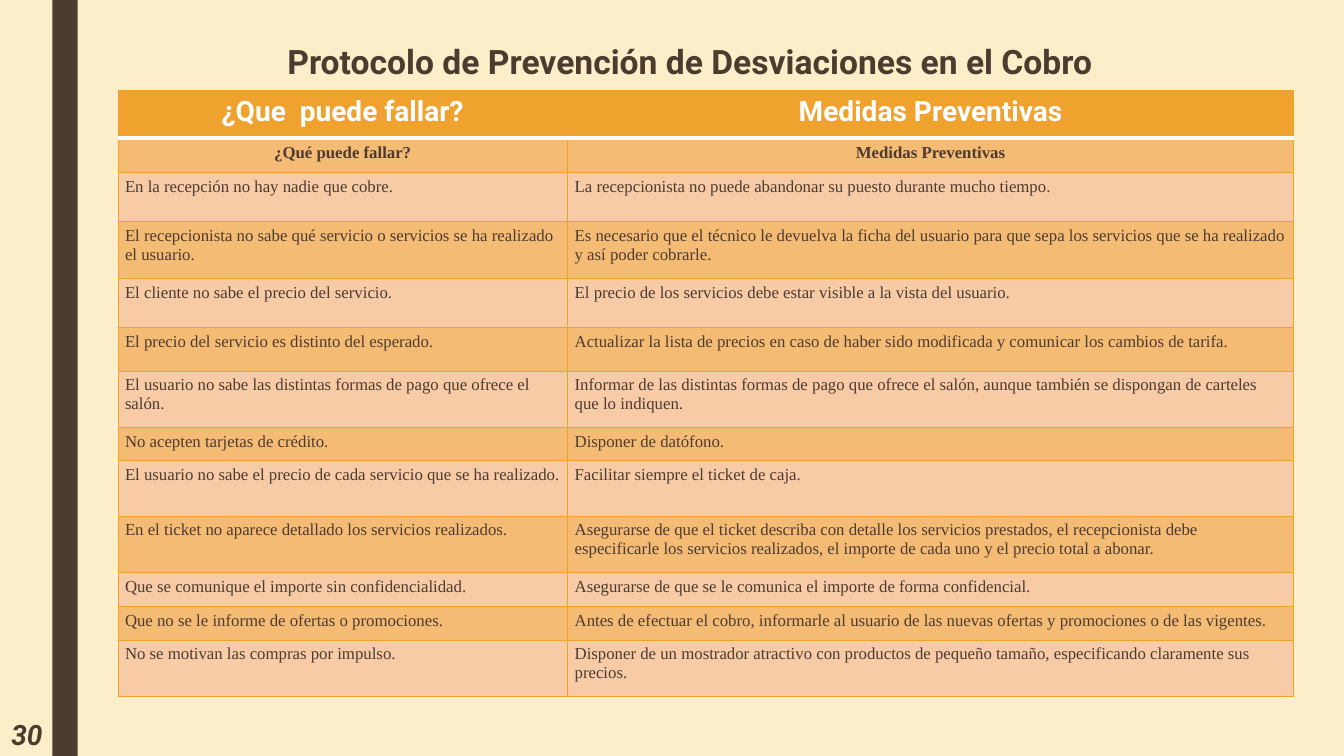
from lxml.etree import SubElement
from pptx import Presentation
from pptx.dml.color import RGBColor
from pptx.enum.shapes import MSO_SHAPE
from pptx.enum.text import MSO_ANCHOR, PP_ALIGN
from pptx.oxml.ns import qn
from pptx.util import Inches, Pt

BROWN, ORANGE, WHITE, CREAM = "4E3B30", "F0A22E", "FFFFFF", "FBEEC9"
BANDS = ("F7CBA5", "F4BB75")
COLUMN_WIDTHS = (4.46, 7.2)
ROW_HEIGHTS = (0.47, 0.34, 0.49, 0.56, 0.49, 0.43, 0.56, 0.33, 0.55, 0.56, 0.34, 0.33, 0.56)
ROWS = (
    ("¿Que  puede fallar?", "Medidas Preventivas"),
    ("¿Qué puede fallar?", "Medidas Preventivas"),
    ("En la recepción no hay nadie que cobre.",
     "La recepcionista no puede abandonar su puesto durante mucho tiempo."),
    ("El recepcionista no sabe qué servicio o servicios se ha realizado el usuario.",
     "Es necesario que el técnico le devuelva la ficha del usuario para que sepa los servicios "
     "que se ha realizado y así poder cobrarle."),
    ("El cliente no sabe el precio del servicio.",
     "El precio de los servicios debe estar visible a la vista del usuario."),
    ("El precio del servicio es distinto del esperado.",
     "Actualizar la lista de precios en caso de haber sido modificada y comunicar los cambios "
     "de tarifa."),
    ("El usuario no sabe las distintas formas de pago que ofrece el salón.",
     "Informar de las distintas formas de pago que ofrece el salón, aunque también se dispongan "
     "de carteles que lo indiquen."),
    ("No acepten tarjetas de crédito.", "Disponer de datófono."),
    ("El usuario no sabe el precio de cada servicio que se ha realizado.",
     "Facilitar siempre el ticket de caja."),
    ("En el ticket no aparece detallado los servicios realizados.",
     "Asegurarse de que el ticket describa con detalle los servicios prestados, el recepcionista "
     "debe especificarle los servicios realizados, el importe de cada uno y el precio total a "
     "abonar."),
    ("Que se comunique el importe sin confidencialidad.",
     "Asegurarse de que se le comunica el importe de forma confidencial."),
    ("Que no se le informe de ofertas o promociones.",
     "Antes de efectuar el cobro, informarle al usuario de las nuevas ofertas y promociones o "
     "de las vigentes."),
    ("No se motivan las compras por impulso.",
     "Disponer de un mostrador atractivo con productos de pequeño tamaño, especificando "
     "claramente sus precios."),
)


def paint(fill, color):
    fill.solid()
    fill.fore_color.rgb = RGBColor.from_string(color)


def write(frame, text, size, align, font="Roboto", color=BROWN, bold=True, italic=False):
    para = frame.paragraphs[0]
    para.text = text
    para.alignment = align
    para.font.name = font
    para.font.size = Pt(size)
    para.font.bold = bold
    para.font.italic = italic
    para.font.color.rgb = RGBColor.from_string(color)
    return para


def add_side_band(page, box):
    band = page.shapes.add_shape(MSO_SHAPE.RECTANGLE, *map(Inches, box))
    paint(band.fill, BROWN)
    band.line.fill.background()
    band.shadow.inherit = False


def add_title(page, box, text):
    title = page.shapes.title
    title.left, title.top, title.width, title.height = map(Inches, box)
    title.text_frame.word_wrap = True
    title.text_frame.vertical_anchor = MSO_ANCHOR.TOP
    para = write(title.text_frame, text, 24, PP_ALIGN.LEFT)
    para.line_spacing = 1.5


def add_page_number(page, box, text):
    number = page.shapes.add_textbox(*map(Inches, box))
    number.text_frame.word_wrap = True
    number.text_frame.vertical_anchor = MSO_ANCHOR.MIDDLE
    write(number.text_frame, text, 20, PP_ALIGN.RIGHT, italic=True)


def set_border(cell, side, color, width):
    line = SubElement(cell._tc.get_or_add_tcPr(), qn(f"a:ln{side}"), w=str(Pt(width)))
    fill = SubElement(line, qn("a:solidFill"))
    SubElement(fill, qn("a:srgbClr"), val=color)


def format_cell(cell, text, row):
    heading = row == 0
    margin = 0.1 if heading else 0.07
    cell.margin_left = cell.margin_right = Inches(margin)
    cell.margin_top = cell.margin_bottom = Inches(0.05)
    for side in "LRTB":
        under_heading = (row, side) in ((0, "B"), (1, "T"))
        color, width = (WHITE, 2.75) if under_heading else (ORANGE, 0.5)
        set_border(cell, side, color, width)
    paint(cell.fill, ORANGE if heading else BANDS[row % 2])
    align = PP_ALIGN.CENTER if row < 2 else PP_ALIGN.LEFT
    if heading:
        write(cell.text_frame, text, 20, align, color=WHITE)
    else:
        write(cell.text_frame, text, 12, align, font="Times New Roman", bold=row == 1)


def add_measures_table(page, box):
    frame = page.shapes.add_table(len(ROWS), len(COLUMN_WIDTHS), *map(Inches, box))
    table = frame.table
    table.horz_banding = False
    for column, width in zip(table.columns, COLUMN_WIDTHS):
        column.width = Inches(width)
    for row, (height, texts) in enumerate(zip(ROW_HEIGHTS, ROWS)):
        table.rows[row].height = Inches(height)
        for column, text in enumerate(texts):
            format_cell(table.cell(row, column), text, row)


def main():
    deck = Presentation()
    deck.slide_width, deck.slide_height = Inches(13.33), Inches(7.5)
    page = deck.slides.add_slide(deck.slide_layouts[5])
    paint(page.background.fill, CREAM)
    add_side_band(page, (0.52, 0, 0.25, 7.5))
    add_title(page, (2.75, 0.16, 10.92, 0.8),
              "Protocolo de Prevención de Desviaciones en el Cobro")
    add_measures_table(page, (1.17, 0.9, sum(COLUMN_WIDTHS), sum(ROW_HEIGHTS)))
    add_page_number(page, (-0.07, 7.06, 0.59, 0.44), "30")
    deck.save("out.pptx")


if __name__ == "__main__":
    main()
